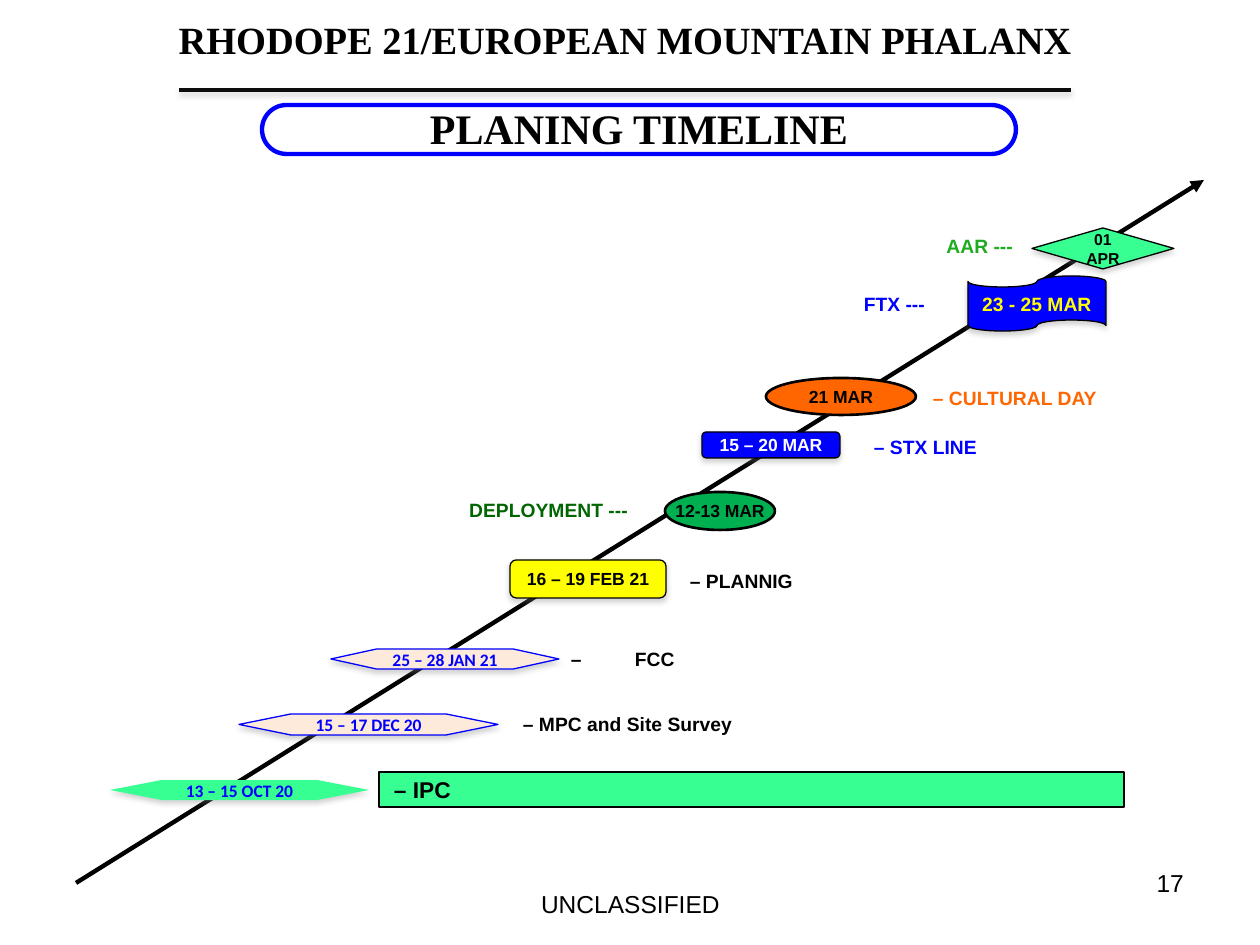
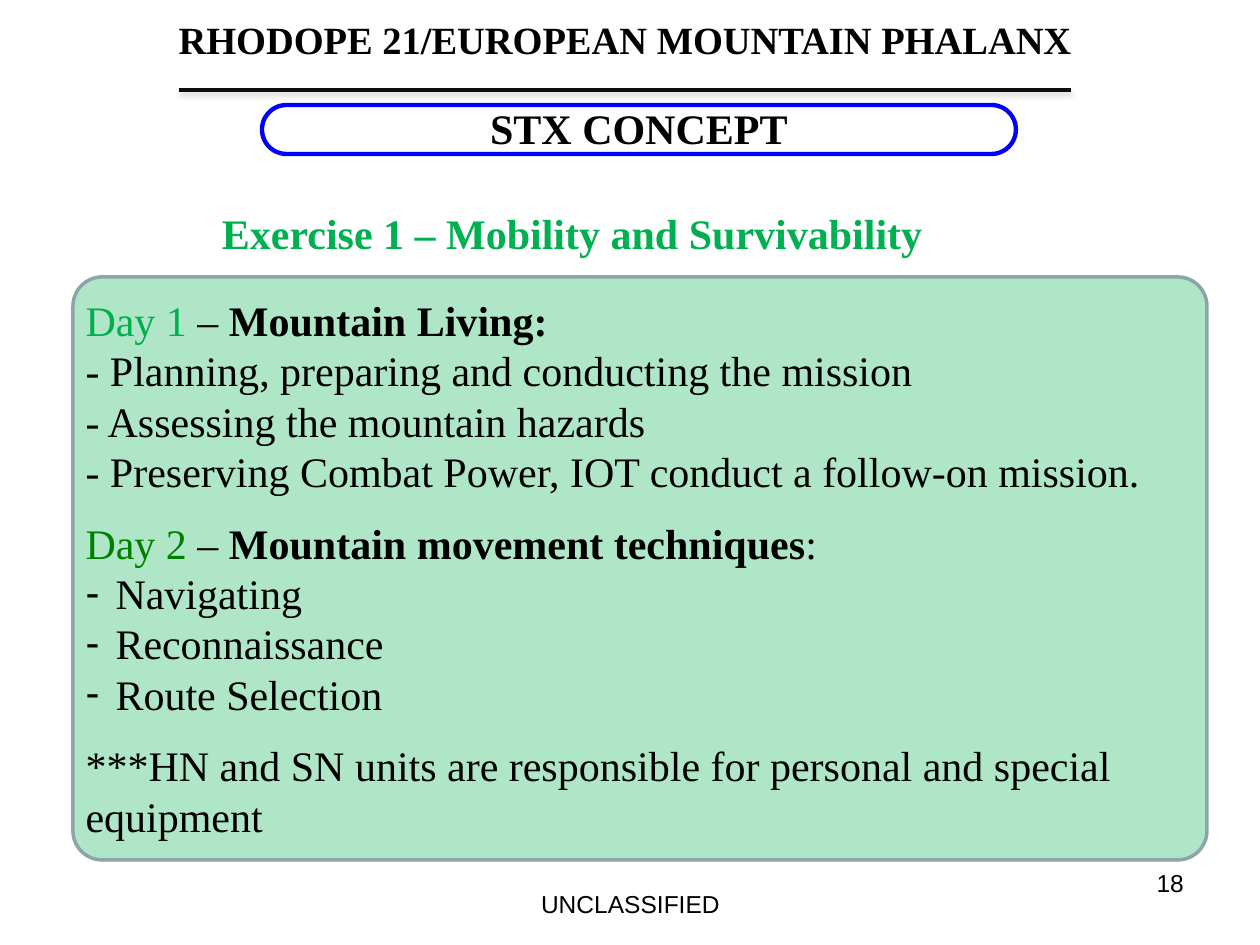
from lxml.etree import SubElement
from pptx import Presentation
from pptx.dml.color import RGBColor
from pptx.enum.shapes import MSO_CONNECTOR, MSO_SHAPE
from pptx.enum.text import MSO_ANCHOR, PP_ALIGN
from pptx.oxml.ns import qn
from pptx.util import Pt

PX = 914400 // 126
SANS, SERIF, DATE_FONT = "Arial", "Times New Roman", "Calibri"
BLACK, WHITE, BLUE, YELLOW = "000000", "FFFFFF", "0000FF", "FFFF00"
MINT, PEACH, GREEN, ORANGE = "37FF91", "FDEADA", "00B050", "FF6600"
LEFT, CENTER, RIGHT = PP_ALIGN.LEFT, PP_ALIGN.CENTER, PP_ALIGN.RIGHT
rgb = RGBColor.from_string


def write(frame, text, size, colour=BLACK, font=SANS, bold=True, align=CENTER, margin=0):
    frame.margin_left = frame.margin_right = margin * PX
    frame.margin_top = frame.margin_bottom = 0
    frame.vertical_anchor = MSO_ANCHOR.MIDDLE
    frame.word_wrap = True
    frame.text = text
    paragraph = frame.paragraphs[0]
    paragraph.alignment = align
    for run in paragraph.runs:
        run.font.size, run.font.name, run.font.bold = Pt(size), font, bold
        run.font.color.rgb = rgb(colour)


def add_effects(properties, shadowed):
    effects = properties.find(qn("a:effectLst"))
    if effects is None:
        effects = SubElement(properties, qn("a:effectLst"))
    if shadowed:
        shadow = SubElement(effects, qn("a:outerShdw"), blurRad=str(Pt(3.1)),
                            dist=str(Pt(1.8)), dir="5400000", rotWithShape="0")
        tint = SubElement(shadow, qn("a:srgbClr"), val="808080")
        SubElement(tint, qn("a:alpha"), val="35000")


deck = Presentation()
deck.slide_width, deck.slide_height = 1260 * PX, 945 * PX

slides = []
for number, topic in (("17", "PLANING TIMELINE"), ("18", "STX CONCEPT")):
    slide = deck.slides.add_slide(deck.slide_layouts[6])
    slides.append(slide)

    rule = slide.shapes.add_connector(MSO_CONNECTOR.STRAIGHT, 179 * PX, 90 * PX, 1071 * PX, 90 * PX)
    rule.line.color.rgb = rgb("0D0D0D")
    rule.line.width = Pt(2)
    add_effects(rule._element.spPr, True)

    for text, left, top, width, height, size, font, bold, align in (
        ("RHODOPE 21/EUROPEAN MOUNTAIN PHALANX", 145, 14, 960, 50, 22, SERIF, True, CENTER),
        ("UNCLASSIFIED", 431, 882, 399, 44, 14, SANS, False, CENTER),
        (number, 903, 861, 281, 44, 14, SANS, False, RIGHT),
    ):
        box = slide.shapes.add_textbox(left * PX, top * PX, width * PX, height * PX)
        write(box.text_frame, text, size, BLACK, font, bold, align)

    pill = slide.shapes.add_shape(MSO_SHAPE.ROUNDED_RECTANGLE, 262 * PX, 105 * PX, 754 * PX, 49 * PX)
    pill.adjustments[0] = 0.5
    pill.shadow.inherit = False
    pill.fill.background()
    pill.line.color.rgb = rgb(BLUE)
    pill.line.width = Pt(2.5)
    write(pill.text_frame, topic, 24, font=SERIF)
    pill.text_frame.margin_bottom = 4 * PX

timeline, concept = slides

time_arrow = timeline.shapes.add_connector(
    MSO_CONNECTOR.STRAIGHT, 76 * PX, 883 * PX, 1204 * PX, 180 * PX)
time_arrow.line.color.rgb = rgb(BLACK)
time_arrow.line.width = Pt(2.5)
SubElement(time_arrow.line._get_or_add_ln(), qn("a:tailEnd"), type="triangle")
add_effects(time_arrow._element.spPr, False)

OVAL, HEXAGON = MSO_SHAPE.OVAL, MSO_SHAPE.FLOWCHART_PREPARATION
events = (
    (OVAL, 766, 378, 150, 37, ORANGE, BLACK, "21 MAR", 10, BLACK),
    (OVAL, 665, 492, 110, 38, GREEN, BLACK, "12-13 MAR", 10, BLACK),
    (MSO_SHAPE.ROUNDED_RECTANGLE, 702, 432, 138, 26, BLUE, BLACK, "15 – 20 MAR", 10, WHITE),
    (MSO_SHAPE.FLOWCHART_ALTERNATE_PROCESS, 510, 560, 156, 38, YELLOW, BLACK, "16 – 19 FEB 21", 10, BLACK),
    (MSO_SHAPE.FLOWCHART_PUNCHED_TAPE, 968, 276, 138, 55, BLUE, BLACK, "23 - 25 MAR", 11, YELLOW),
    (MSO_SHAPE.DIAMOND, 1032, 228, 142, 41, MINT, BLACK, "01 APR", 9, BLACK),
    (HEXAGON, 239, 714, 259, 21, PEACH, BLUE, "15 – 17 DEC 20", 10, BLUE),
    (HEXAGON, 331, 649, 228, 20, PEACH, BLUE, "25 – 28 JAN 21", 10, BLUE),
    (HEXAGON, 110, 780, 259, 20, MINT, None, "13 – 15 OCT 20", 10, BLUE),
)
for outline, left, top, width, height, fill, edge, date, size, colour in events:
    event = timeline.shapes.add_shape(outline, left * PX, top * PX, width * PX, height * PX)
    event.shadow.inherit = False
    event.fill.solid()
    event.fill.fore_color.rgb = rgb(fill)
    if edge:
        event.line.color.rgb = rgb(edge)
        event.line.width = Pt(1.5 if outline == OVAL else 0.75)
    else:
        event.line.fill.background()
    add_effects(event._element.spPr, outline != OVAL)
    is_diamond = outline == MSO_SHAPE.DIAMOND
    write(event.text_frame, date, size, colour, DATE_FONT if outline == HEXAGON else SANS,
          margin=12 if is_diamond else 0)
    event.text_frame.word_wrap = is_diamond

LABEL_WIDTH, LABEL_HEIGHT = 250, 34
for label, edge, middle, align, colour in (
    ("– CULTURAL DAY", 933, 398, LEFT, ORANGE),
    ("DEPLOYMENT ---", 628, 510, RIGHT, "006600"),
    ("– STX LINE", 874, 447, LEFT, BLUE),
    ("– PLANNIG", 690, 581, LEFT, BLACK),
    ("FTX ---", 925, 304, RIGHT, BLUE),
    ("AAR ---", 1013, 246, RIGHT, "1DAB20"),
    ("– MPC and Site Survey", 523, 724, LEFT, BLACK),
    ("–\tFCC", 571, 659, LEFT, BLACK),
):
    left = edge - LABEL_WIDTH if align == RIGHT else edge
    box = timeline.shapes.add_textbox(
        left * PX, (middle - LABEL_HEIGHT // 2) * PX, LABEL_WIDTH * PX, LABEL_HEIGHT * PX)
    write(box.text_frame, label, 11, colour, align=align)
    if "\t" in label:
        stops = SubElement(box.text_frame.paragraphs[0]._p.get_or_add_pPr(), qn("a:tabLst"))
        SubElement(stops, qn("a:tab"), pos=str(64 * PX), algn="l")

ipc_bar = timeline.shapes.add_shape(MSO_SHAPE.RECTANGLE, 379 * PX, 772 * PX, 745 * PX, 35 * PX)
ipc_bar.shadow.inherit = False
ipc_bar.fill.solid()
ipc_bar.fill.fore_color.rgb = rgb(MINT)
ipc_bar.line.color.rgb = rgb(BLACK)
ipc_bar.line.width = Pt(0.75)
write(ipc_bar.text_frame, "– IPC", 13, align=LEFT, margin=15)

exercise = concept.shapes.add_textbox(222 * PX, 205 * PX, 760 * PX, 56 * PX)
write(exercise.text_frame, "Exercise 1 – Mobility and Survivability", 24, GREEN, SERIF, align=LEFT)

panel = concept.shapes.add_shape(MSO_SHAPE.ROUNDED_RECTANGLE, 73 * PX, 277 * PX, 1134 * PX, 583 * PX)
panel.adjustments[0] = 0.05
panel.shadow.inherit = False
panel.fill.solid()
panel.fill.fore_color.rgb = rgb(GREEN)
panel_tint = panel._element.spPr.find(qn("a:solidFill")).find(qn("a:srgbClr"))
SubElement(panel_tint, qn("a:alpha"), val="31000")
panel.line.color.rgb = rgb("8AA6A8")
panel.line.width = Pt(2)

programme = panel.text_frame
programme.word_wrap = True
programme.vertical_anchor = MSO_ANCHOR.TOP
programme.margin_left, programme.margin_top = 4 * PX, 9 * PX
days = (
    (False, 0, (("Day 1 ", GREEN, False), ("– ", BLACK, False), ("Mountain Living:", BLACK, True))),
    (False, 0, (("- Planning, preparing and conducting the mission", BLACK, False),)),
    (False, 0, (("- Assessing the mountain hazards", BLACK, False),)),
    (False, 0, (("- Preserving Combat Power, IOT conduct a follow-on mission.", BLACK, False),)),
    (False, 12, (("Day 2 ", "008000", False), ("– ", BLACK, False),
                 ("Mountain movement techniques", BLACK, True), (":", BLACK, False))),
    (True, 0, (("Navigating", BLACK, False),)),
    (True, 0, (("Reconnaissance", BLACK, False),)),
    (True, 0, (("Route Selection", BLACK, False),)),
    (False, 12, (("***HN and SN units are responsible for personal and special equipment", BLACK, False),)),
)
for index, (bulleted, gap, pieces) in enumerate(days):
    paragraph = programme.add_paragraph() if index else programme.paragraphs[0]
    paragraph.alignment = LEFT
    if gap:
        paragraph.space_before = Pt(gap)
    if bulleted:
        settings = paragraph._p.get_or_add_pPr()
        settings.set("marL", str(30 * PX))
        settings.set("indent", str(-30 * PX))
        SubElement(settings, qn("a:buFont"), typeface=SANS)
        SubElement(settings, qn("a:buChar"), char="-")
    for text, colour, bold in pieces:
        run = paragraph.add_run()
        run.text = text
        run.font.size, run.font.name, run.font.bold = Pt(24), SERIF, bold
        run.font.color.rgb = rgb(colour)

deck.save("out.pptx")
